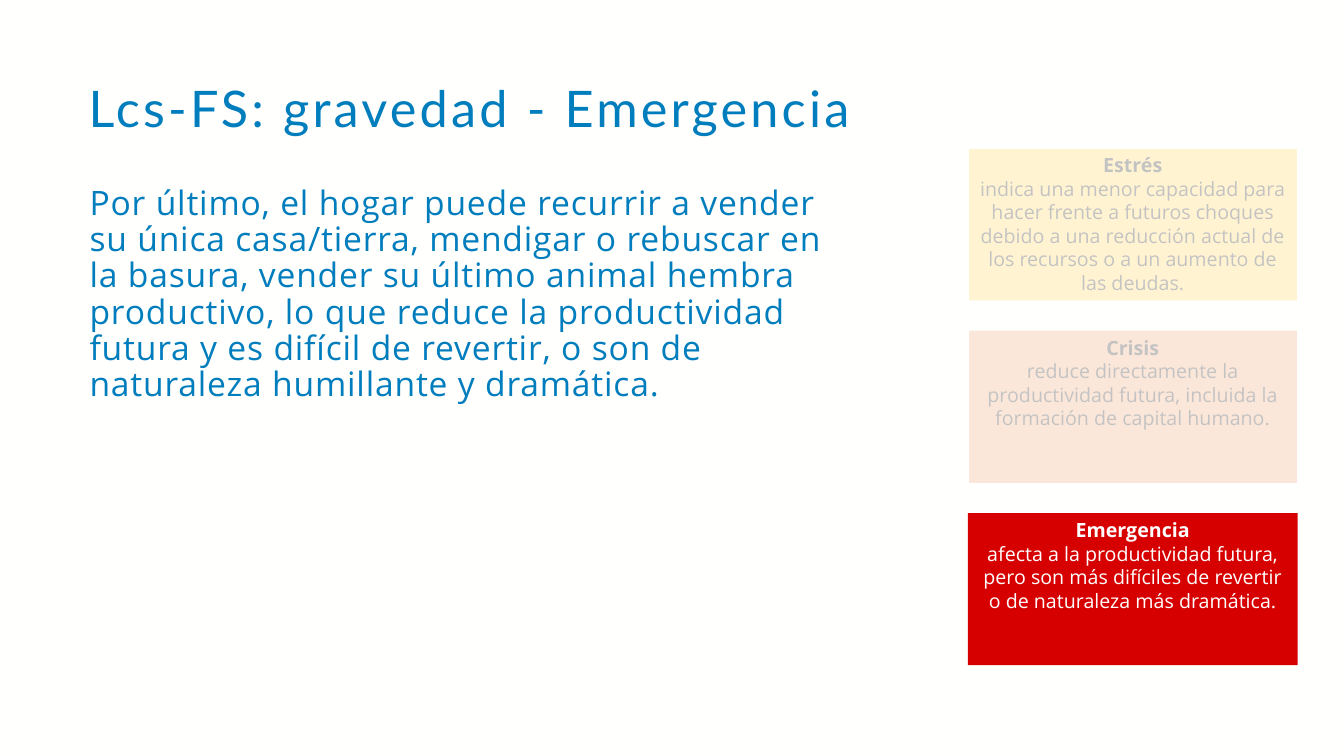
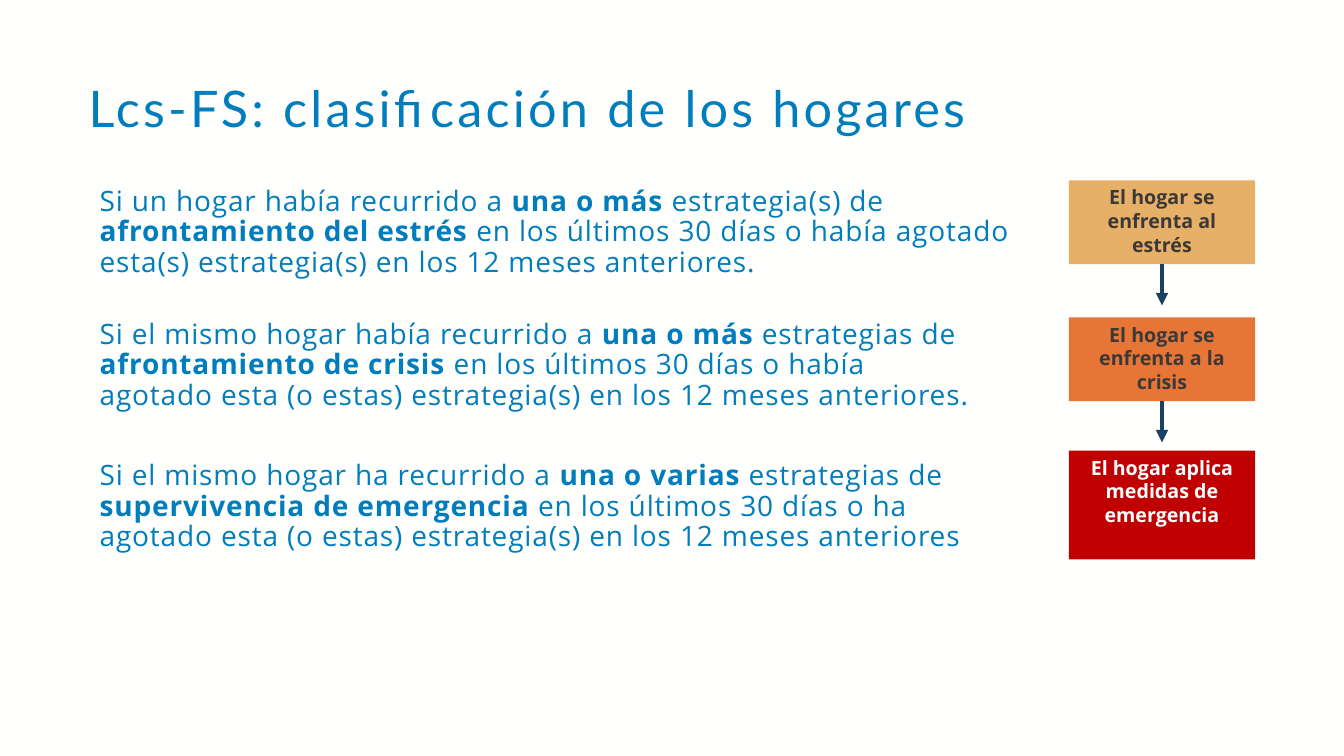
from lxml import etree
from pptx import Presentation
from pptx.dml.color import RGBColor
from pptx.enum.shapes import MSO_CONNECTOR as Link, MSO_SHAPE as Form
from pptx.enum.text import MSO_ANCHOR as Anchor, MSO_AUTO_SIZE as Fit, PP_ALIGN as Align
from pptx.oxml.ns import qn
from pptx.util import Inches, Pt

# Shared look
BLUE, DARK, WHITE, NAVY = "007DBC", "3B3838", "FFFFFF", "1A4161"
PAPER = "FFFFFE"
HEAD, BODY = "Lato", "Open Sans"


def rgb(code):
    return RGBColor.from_string(code)


def place(shape, left, top, width, height):
    shape.left, shape.top = Inches(left), Inches(top)
    shape.width, shape.height = Inches(width), Inches(height)


def style(run, size, color, name=BODY, bold=False, gap=0):
    font = run.font
    font.size, font.name, font.bold = Pt(size), name, bold
    font.color.rgb = rgb(color)
    if gap:
        run._r.get_or_add_rPr().set("spc", str(round(gap * 100)))


# Element kinds
def add_page(deck, title):
    page = deck.slides.add_slide(deck.slide_layouts[5])
    head = page.shapes.title
    place(head, 0.78, 0.78, 12.09, 0.72)
    frame = head.text_frame
    frame.text = title
    frame.auto_size, frame.vertical_anchor = Fit.NONE, Anchor.TOP
    para = frame.paragraphs[0]
    para.alignment, para.line_spacing = Align.LEFT, 0.9
    style(para.runs[0], 36, BLUE, HEAD, gap=2.3)
    return page


def add_text(page, area, parts, size):
    """Write parts as one paragraph; every second part is bold."""
    frame = page.shapes.add_textbox(*map(Inches, area)).text_frame
    frame.word_wrap = True
    para = frame.paragraphs[0]
    para.line_spacing = 0.9
    for i, part in enumerate(parts):
        run = para.add_run()
        run.text = part
        style(run, size, BLUE, bold=i % 2 == 1, gap=0.6)


def add_rect(page, area, fill):
    rect = page.shapes.add_shape(Form.RECTANGLE, *map(Inches, area))
    rect.shadow.inherit = False
    rect.fill.solid()
    rect.fill.fore_color.rgb = rgb(fill)
    rect.line.fill.background()
    return rect


def add_card(page, area, fill, color, lines):
    """Draw a filled box with a bold first line."""
    frame = add_rect(page, area, fill).text_frame
    frame.word_wrap, frame.vertical_anchor = True, Anchor.TOP
    frame.text = "\n".join(lines)
    for i, para in enumerate(frame.paragraphs):
        para.alignment = Align.CENTER
        style(para.runs[0], 14, color, bold=i == 0)


def add_veil(page, area):
    veil = add_rect(page, area, WHITE)
    veil.line.color.rgb, veil.line.width = rgb(WHITE), Pt(1)
    tint = veil._element.spPr.find(qn("a:solidFill")).find(qn("a:srgbClr"))
    etree.SubElement(tint, qn("a:alpha")).set("val", "70000")


def add_arrow(page, x, top, size):
    ends = map(Inches, (x, top, x, top + size))
    arrow = page.shapes.add_connector(Link.STRAIGHT, *ends)
    arrow.line.color.rgb, arrow.line.width = rgb(NAVY), Pt(3)
    etree.SubElement(arrow.line._get_or_add_ln(), qn("a:tailEnd")).set("type", "triangle")
    etree.SubElement(arrow._element.spPr, qn("a:effectLst"))


# Slides
def add_level(deck):
    page = add_page(deck, "Lcs-FS: gravedad - Emergencia")
    add_text(page, (0.79, 1.8, 7.63, 4.27), [
        "Por último, el hogar puede recurrir a vender su única casa/tierra, "
        "mendigar o rebuscar en la basura, vender su último animal hembra "
        "productivo, lo que reduce la productividad futura y es difícil de "
        "revertir, o son de naturaleza humillante y dramática."], 24)
    cards = [
        ("FFD966", DARK, "Estrés",
         "indica una menor capacidad para hacer frente a futuros choques debido "
         "a una reducción actual de los recursos o a un aumento de las deudas."),
        ("F4B183", DARK, "Crisis",
         "reduce directamente la productividad futura, incluida la formación de "
         "capital humano."),
        ("D70000", WHITE, "Emergencia",
         "afecta a la productividad futura, pero son más difíciles de revertir "
         "o de naturaleza más dramática."),
    ]
    for i, (fill, color, *lines) in enumerate(cards):
        add_card(page, (9.6, 1.47 + 1.81 * i, 3.27, 1.51), fill, color, lines)
    # Fade the levels not discussed here
    for top in (1.47, 3.25):
        add_veil(page, (9.6, top, 3.27, 1.57))


def add_class(deck):
    page = add_page(deck, "Lcs-FS: clasificación de los hogares")
    rules = [
        (1.81, 9.27, "Si un hogar había recurrido a ", "una o más ",
         "estrategia(s) de ", "afrontamiento del estrés ",
         "en los últimos 30 días o había agotado esta(s) estrategia(s) en los "
         "12 meses anteriores."),
        (3.13, 8.93, "Si el mismo hogar había recurrido a ", "una o más ",
         "estrategias de ", "afrontamiento de crisis ",
         "en los últimos 30 días o había agotado esta (o estas) estrategia(s) "
         "en los 12 meses anteriores."),
        (4.53, 9.27, "Si el mismo hogar ha recurrido a ", "una o varias ",
         "estrategias de ", "supervivencia de emergencia ",
         "en los últimos 30 días o ha agotado esta (o estas) estrategia(s) en "
         "los 12 meses anteriores"),
    ]
    for top, width, *parts in rules:
        add_text(page, (0.89, top, width, 1.01), parts, 20)

    left, width = 10.6, 1.85
    steps = [
        (1.79, 0.83, "E6B068", DARK, "El hogar se enfrenta al estrés"),
        (3.15, 0.83, "E67536", DARK, "El hogar se enfrenta a la crisis"),
        (4.47, 1.08, "C00000", WHITE, "El hogar aplica medidas de emergencia"),
    ]
    for top, height, fill, color, text in steps:
        add_card(page, (left, top, width, height), fill, color, [text])
    for top, height, *_ in steps[:-1]:
        add_arrow(page, left + width / 2, top + height, 0.41)


def main():
    deck = Presentation()
    deck.slide_width, deck.slide_height = Inches(13.33), Inches(7.5)
    back = deck.slide_master.background.fill
    back.solid()
    back.fore_color.rgb = rgb(PAPER)
    add_level(deck)
    add_class(deck)
    deck.save("out.pptx")


if __name__ == "__main__":
    main()
